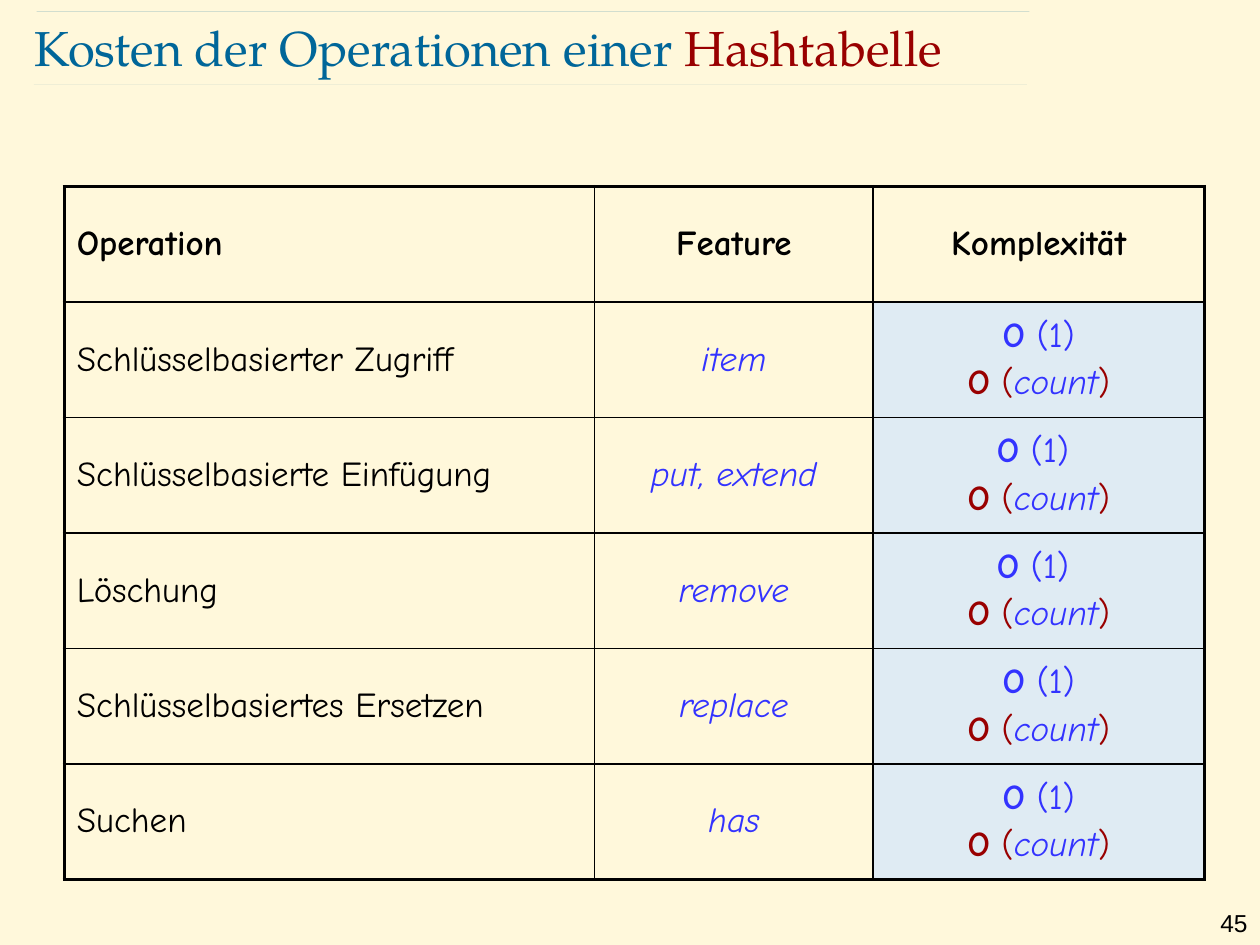
from dataclasses import dataclass

from lxml import etree
from pptx import Presentation
from pptx.dml.color import RGBColor
from pptx.enum.shapes import MSO_CONNECTOR
from pptx.enum.text import MSO_ANCHOR, PP_ALIGN
from pptx.oxml.ns import qn
from pptx.util import Inches, Pt

LEFT, CENTER, RIGHT = PP_ALIGN.LEFT, PP_ALIGN.CENTER, PP_ALIGN.RIGHT
MIDDLE = MSO_ANCHOR.MIDDLE
STRAIGHT = MSO_CONNECTOR.STRAIGHT


@dataclass(frozen=True)
class Theme:
    background: str = "FFF8DB"
    title: str = "006699"
    accent: str = "990000"
    feature: str = "3333FF"
    text: str = "000000"
    highlight: str = "DFEBF3"
    title_font: str = "TeX Gyre Pagella"
    table_font: str = "Comic Neue"
    number_font: str = "Arial"
    title_size: int = 28
    table_size: int = 20
    number_size: int = 14
    thin: float = 1
    thick: float = 2.25


theme = Theme()


def add_run(paragraph, text, font=theme.table_font, size=theme.table_size,
            color=theme.text, bold=False, italic=False, align=LEFT):
    paragraph.alignment = align
    run = paragraph.add_run()
    run.text = text
    run.font.name = font
    run.font.size = Pt(size)
    run.font.bold = bold
    run.font.italic = italic
    run.font.color.rgb = RGBColor.from_string(color)


def set_border(cell, side, width):
    properties = cell._tc.get_or_add_tcPr()
    line = etree.Element(qn(f"a:ln{side}"), w=str(Pt(width)))
    fill = etree.SubElement(line, qn("a:solidFill"))
    etree.SubElement(fill, qn("a:srgbClr"), val=theme.text)
    properties.append(line)


presentation = Presentation()
presentation.slide_width = Inches(10)
presentation.slide_height = Inches(7.5)
slide = presentation.slides.add_slide(presentation.slide_layouts[6])
slide.background.fill.solid()
slide.background.fill.fore_color.rgb = RGBColor.from_string(theme.background)

# Hairlines above and below the title
for left, top in ((0.27, 0.67), (0.29, 0.09)):
    rule = slide.shapes.add_connector(
        STRAIGHT, Inches(left), Inches(top), Inches(left + 7.88), Inches(top))
    rule.line.width = Pt(0.1)
    rule.line.color.rgb = RGBColor.from_string(theme.title)
    color = rule._element.spPr.find(".//" + qn("a:srgbClr"))
    etree.SubElement(color, qn("a:alpha"), val="49000")
    etree.SubElement(rule._element.spPr, qn("a:effectLst"))

# Title and slide number
number_format = dict(font=theme.number_font, size=theme.number_size, align=RIGHT)
title_format = dict(font=theme.title_font, size=theme.title_size)
text_boxes = (
    ((0.27, 0.13, 8.69, 0.48), 0, (
        ("Kosten der Operationen einer ", dict(title_format, color=theme.title)),
        ("Hashtabelle", dict(title_format, color=theme.accent)))),
    ((9.45, 7.16, 0.55, 0.36), 0.1, (("45", number_format),)),
)
for position, margin, runs in text_boxes:
    box = slide.shapes.add_textbox(*(Inches(value) for value in position))
    frame = box.text_frame
    frame.word_wrap = True
    frame.margin_left = frame.margin_right = Inches(margin)
    frame.margin_top = frame.margin_bottom = Inches(margin / 2)
    frame.vertical_anchor = MIDDLE if margin == 0 else MSO_ANCHOR.TOP
    for text, text_format in runs:
        add_run(frame.paragraphs[0], text, **text_format)

# Table of operations: name, feature, best-case cost
headings = ("Operation", "Feature", "Komplexität")
operations = (
    ("Schlüsselbasierter Zugriff", "item", " (1)"),
    ("Schlüsselbasierte Einfügung", "put, extend", " (1) "),
    ("Löschung", "remove", " (1) "),
    ("Schlüsselbasiertes Ersetzen", "replace", " (1)"),
    ("Suchen", "has", " (1)"),
)
row_count, column_count = len(operations) + 1, len(headings)
table = slide.shapes.add_table(
    row_count, column_count,
    Inches(0.51), Inches(1.48), Inches(9.05), Inches(5.5)).table
table.first_row = table.horz_banding = False
for column, width in zip(table.columns, (4.21, 2.21, 2.63)):
    column.width = Inches(width)
for row in table.rows:
    row.height = Inches(5.5 / row_count)

# Cell borders and fills: thick outer frame, thin inner grid
for row in range(row_count):
    for column in range(column_count):
        cell = table.cell(row, column)
        cell.vertical_anchor = MIDDLE
        outer_sides = {"L": column == 0, "R": column == column_count - 1,
                       "T": row == 0, "B": row == row_count - 1}
        for side, is_outer in outer_sides.items():
            set_border(cell, side, theme.thick if is_outer else theme.thin)
        if row > 0 and column == column_count - 1:
            cell.fill.solid()
            cell.fill.fore_color.rgb = RGBColor.from_string(theme.highlight)
        else:
            cell.fill.background()

# Cell text
for column, heading in enumerate(headings):
    add_run(table.cell(0, column).text_frame.paragraphs[0], heading,
            bold=True, align=CENTER if column else LEFT)
for row, (operation, feature, best_cost) in enumerate(operations, start=1):
    name_cell, feature_cell, cost_cell = table.rows[row].cells
    add_run(name_cell.text_frame.paragraphs[0], operation)
    add_run(feature_cell.text_frame.paragraphs[0], feature,
            color=theme.feature, italic=True, align=CENTER)
    best = cost_cell.text_frame.paragraphs[0]
    add_run(best, "O", color=theme.feature, bold=True, align=CENTER)
    add_run(best, best_cost, color=theme.feature, align=CENTER)
    worst = cost_cell.text_frame.add_paragraph()
    worst.space_before = Pt(0.2 * theme.table_size)
    add_run(worst, "O", color=theme.accent, bold=True, align=CENTER)
    add_run(worst, " (", color=theme.accent, align=CENTER)
    add_run(worst, "count", color=theme.feature, italic=True, align=CENTER)
    add_run(worst, ")", color=theme.accent, align=CENTER)

presentation.save("out.pptx")
